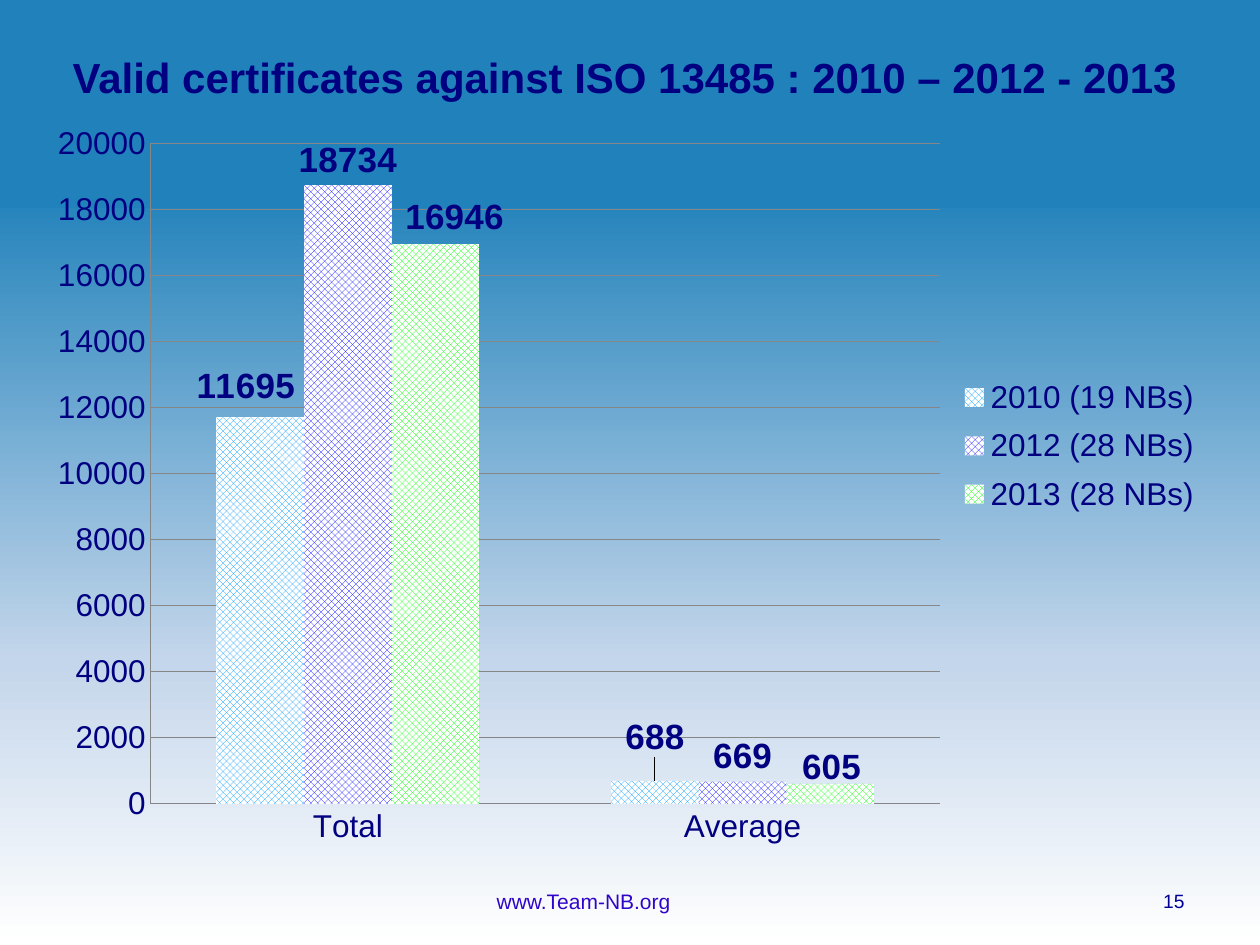
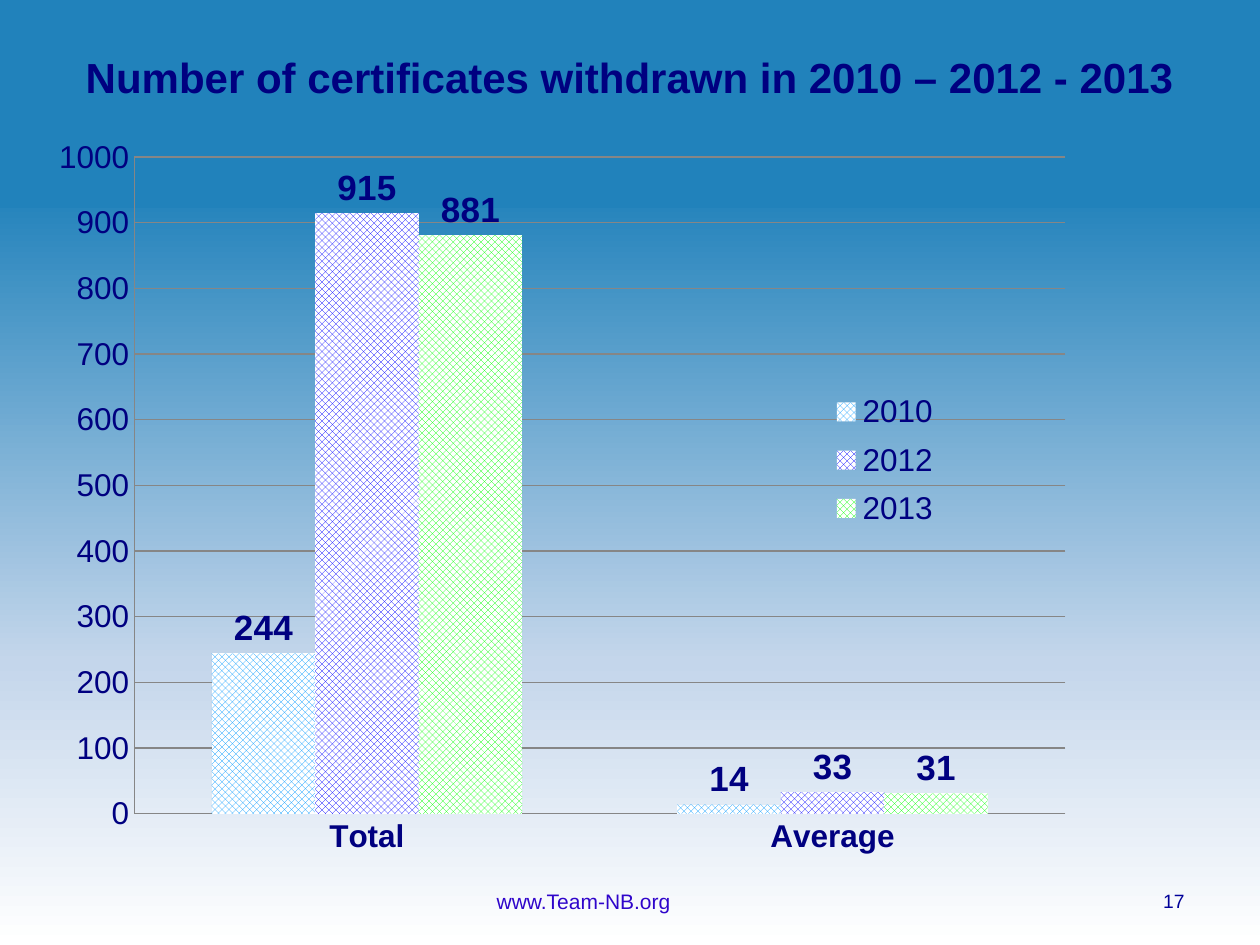
from dataclasses import dataclass

from lxml import etree
from pptx import Presentation
from pptx.chart.data import CategoryChartData
from pptx.dml.color import RGBColor
from pptx.enum.chart import (XL_CHART_TYPE, XL_LABEL_POSITION,
                             XL_LEGEND_POSITION, XL_TICK_MARK)
from pptx.enum.dml import MSO_PATTERN
from pptx.enum.shapes import MSO_SHAPE
from pptx.enum.text import MSO_ANCHOR, MSO_AUTO_SIZE, PP_ALIGN
from pptx.oxml.ns import qn
from pptx.util import Pt


@dataclass(frozen=True)
class Theme:
    font: str = "Arial"
    band: str = "2182BB"
    ink: str = "000080"
    page: str = "000099"
    link: str = "2F05CB"
    grid: str = "868686"
    white: str = "FFFFFF"
    bars: tuple = ("0099FF", "0101FF", "00FF00")
    gradient: tuple = ((20, "2182BB"), (70, "C4D6EB"), (100, "FFFFFF"))
    title_size: int = 24
    label_size: int = 20
    axis_size: int = 18
    footer_size: int = 12
    page_size: int = 11


def rgb(value):
    return RGBColor.from_string(value)


def set_layout(layout, **values):
    """Fill a c:layout element with a manual layout."""
    manual = etree.SubElement(layout, qn("c:manualLayout"))
    for name, value in values.items():
        etree.SubElement(manual, qn(f"c:{name}")).set("val", str(value))


class Deck:
    def __init__(self, theme):
        self.theme = theme
        self.prs = Presentation()
        self.prs.slide_width, self.prs.slide_height = Pt(720), Pt(540)
        self.s = None
        self.background()

    def background(self):
        fill = self.prs.slide_master.background.fill
        fill.gradient()
        fill.gradient_angle = 270
        stops = self.prs.slide_master.element.find(".//" + qn("a:gsLst"))
        for stop in list(stops):
            stops.remove(stop)
        for percent, color in self.theme.gradient:
            stop = etree.SubElement(stops, qn("a:gs"), pos=str(percent * 1000))
            etree.SubElement(stop, qn("a:srgbClr"), val=color)

    def style(self, font, size, color, bold=False):
        font.name, font.size, font.bold = self.theme.font, Pt(size), bold
        font.color.rgb = rgb(color)

    def slide(self, title, title_left, title_width, number):
        t = self.theme
        self.s = self.prs.slides.add_slide(self.prs.slide_layouts[6])
        self.band()
        self.text(str(number), (516, 500.5, 168, 29), t.page_size, t.page,
                  PP_ALIGN.RIGHT)
        self.text("www.Team-NB.org", (219.5, 500.5, 228, 29), t.footer_size,
                  t.link)
        tf = self.text(title, (title_left, 26, title_width, 36), t.title_size,
                       t.ink, bold=True, anchor=MSO_ANCHOR.TOP)
        tf.auto_size = MSO_AUTO_SIZE.SHAPE_TO_FIT_TEXT

    def band(self):
        sp = self.s.shapes.add_shape(MSO_SHAPE.RECTANGLE, 0, 0, Pt(720), Pt(118))
        sp.shadow.inherit = False
        sp.fill.solid()
        sp.fill.fore_color.rgb = sp.line.color.rgb = rgb(self.theme.band)
        sp.line.width = Pt(2)

    def text(self, words, box, size, color, align=PP_ALIGN.CENTER, bold=False,
             anchor=MSO_ANCHOR.MIDDLE):
        tf = self.s.shapes.add_textbox(*map(Pt, box)).text_frame
        tf.word_wrap, tf.vertical_anchor = True, anchor
        p = tf.paragraphs[0]
        p.text, p.alignment = words, align
        self.style(p.font, size, color, bold)
        return tf

    def columns(self, box, series, top, step, plot, legend, bold_cats=False,
                label_shifts=None):
        """Clustered columns; plot and legend are x, y, w, h fractions."""
        t = self.theme
        data = CategoryChartData(number_format="0")
        data.categories = ["Total", "Average"]
        for name, values in series.items():
            data.add_series(name, values)
        chart = self.s.shapes.add_chart(XL_CHART_TYPE.COLUMN_CLUSTERED,
                                        *map(Pt, box), data).chart
        self.style(chart.font, t.axis_size, t.ink)
        chart.has_title = False
        self.axes(chart, top, step, bold_cats)

        # Columns and their values
        bars = chart.plots[0]
        bars.gap_width, bars.overlap, bars.vary_by_categories = 150, 0, False
        for ser, color in zip(bars.series, t.bars):
            ser.invert_if_negative = False
            fill = ser.format.fill
            fill.patterned()
            fill.pattern = MSO_PATTERN.LARGE_CHECKER_BOARD
            fill.fore_color.rgb, fill.back_color.rgb = rgb(color), rgb(t.white)
            labels = ser.data_labels
            labels.show_value = True
            labels.number_format, labels.number_format_is_linked = "0", False
            labels.position = XL_LABEL_POSITION.OUTSIDE_END
            self.style(labels.font, t.label_size, t.ink, True)
        for (row, point), shift in (label_shifts or {}).items():
            self.shift_label(chart, row, point, *shift)

        # Legend and plot placement
        chart.has_legend = True
        chart.legend.position = XL_LEGEND_POSITION.RIGHT
        chart.legend.include_in_layout = True
        self.style(chart.legend.font, t.axis_size, t.ink)
        self.place(chart, "c:legend", legend)
        self.place(chart, "c:plotArea", plot, layoutTarget="inner")

    def axes(self, chart, top, step, bold_cats):
        t = self.theme
        for axis, bold in ((chart.category_axis, bold_cats),
                           (chart.value_axis, False)):
            axis.major_tick_mark = axis.minor_tick_mark = XL_TICK_MARK.NONE
            axis.format.line.color.rgb = rgb(t.grid)
            axis.format.line.width = Pt(0.75)
            self.style(axis.tick_labels.font, t.axis_size, t.ink, bold)
        axis = chart.value_axis
        axis.minimum_scale, axis.maximum_scale, axis.major_unit = 0, top, step
        axis.tick_labels.number_format = "0"
        axis.tick_labels.number_format_is_linked = False
        axis.has_major_gridlines = True
        axis.major_gridlines.format.line.color.rgb = rgb(t.grid)
        axis.major_gridlines.format.line.width = Pt(0.75)

    def shift_label(self, chart, row, point, dx, dy):
        label = chart.plots[0].series[row].points[point].data_label
        label.position = XL_LABEL_POSITION.OUTSIDE_END
        self.style(label.font, self.theme.label_size, self.theme.ink, True)
        ser = chart.element.findall(".//" + qn("c:ser"))[row]
        for idx in ser.iterfind(f".//{qn('c:dLbl')}/{qn('c:idx')}"):
            if idx.get("val") == str(point):
                layout = etree.Element(qn("c:layout"))
                idx.addnext(layout)
                set_layout(layout, x=dx, y=dy)

    def place(self, chart, tag, box, **target):
        part = chart.element.find(".//" + qn(tag))
        layout = part.find(qn("c:layout"))
        if layout is None:
            layout = etree.Element(qn("c:layout"))
            if tag == "c:legend":
                part.find(qn("c:legendPos")).addnext(layout)
            else:
                part.insert(0, layout)
        for child in list(layout):
            layout.remove(child)
        x, y, w, h = box
        set_layout(layout, **target, xMode="edge", yMode="edge",
                   x=x, y=y, w=w, h=h)


def main():
    deck = Deck(Theme())

    # Valid certificates
    deck.slide("Valid certificates against ISO 13485 : 2010 – 2012 - 2013",
               17, 680, 15)
    deck.columns(
        (20, 63.5, 680.5, 427.5),
        {"2010 (19 NBs)": (11695, 688),
         "2012 (28 NBs)": (18734, 669),
         "2013 (28 NBs)": (16946, 605)},
        top=20000, step=2000,
        plot=(0.097, 0.043, 0.663, 0.883), legend=(0.772, 0.342, 0.21, 0.211),
        label_shifts={(0, 0): (-0.012, -0.008), (0, 1): (0, -0.025),
                      (2, 0): (0.016, -0.002), (2, 1): (0.001, 0.012)})

    # Withdrawn certificates
    deck.slide("Number of certificates withdrawn in 2010 – 2012 - 2013",
               31, 657.5, 17)
    deck.columns(
        (20, 71.5, 674.5, 425.5),
        {"2010": (244, 14), "2012": (915, 33), "2013": (881, 31)},
        top=1000, step=100, bold_cats=True,
        plot=(0.084, 0.043, 0.789, 0.882), legend=(0.67, 0.344, 0.1, 0.212))

    deck.prs.save("out.pptx")


if __name__ == "__main__":
    main()
